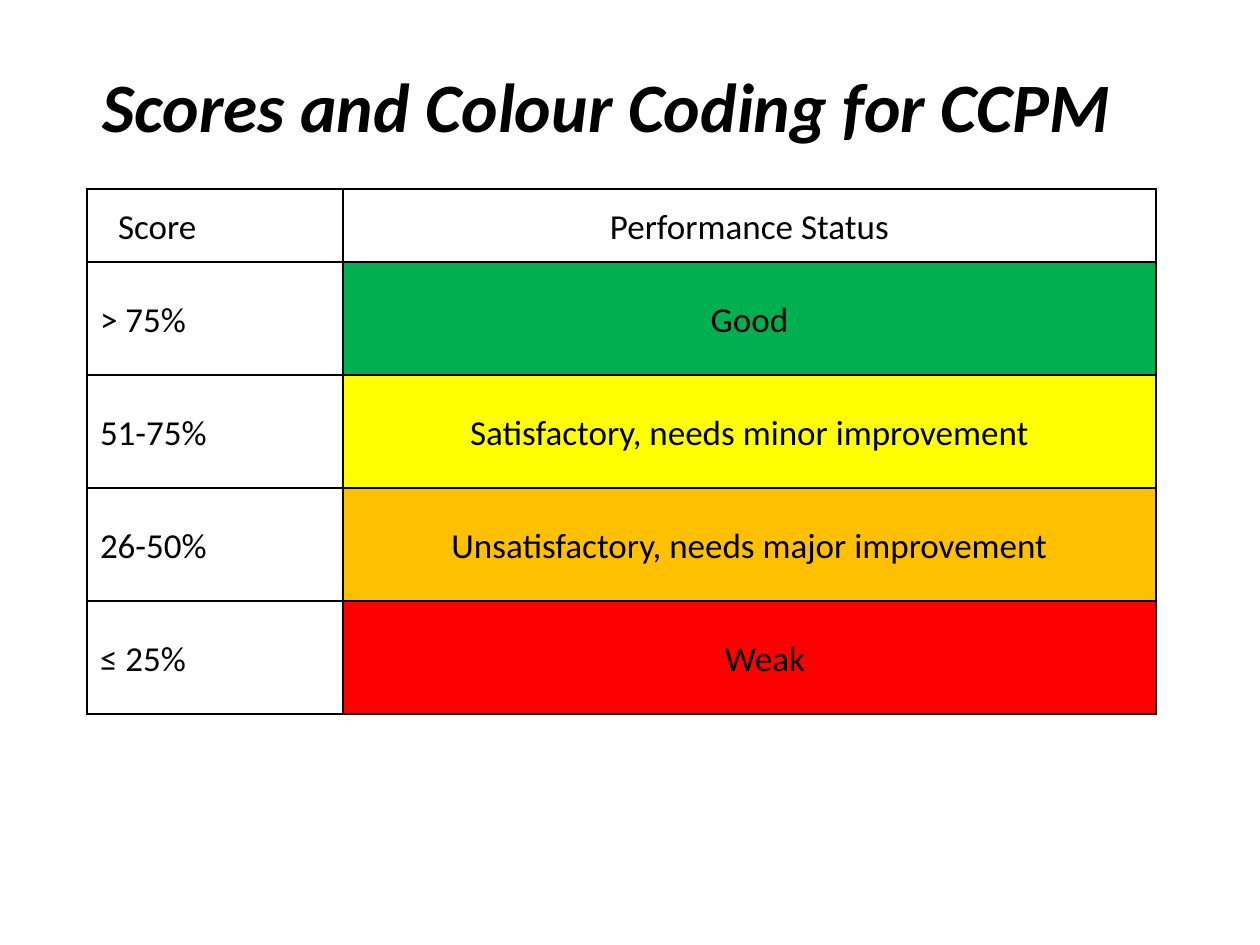
from dataclasses import dataclass

from lxml import etree
from pptx import Presentation
from pptx.dml.color import RGBColor
from pptx.enum.text import MSO_ANCHOR, PP_ALIGN
from pptx.oxml.ns import qn
from pptx.util import Emu, Pt

MIDDLE = MSO_ANCHOR.MIDDLE
LEFT = PP_ALIGN.LEFT
CENTER = PP_ALIGN.CENTER

PX_PER_INCH = 126
FONT = "Calibri"
COLORS = {
    "black": "000000",
    "good": "00B050",
    "minor": "FFFF00",
    "major": "FFC000",
    "weak": "FF0000",
}
COLUMN_WIDTHS = (256, 813)
HEADER_HEIGHT = 73
BAND_HEIGHT = 113


@dataclass
class Entry:
    text: str
    align: PP_ALIGN = CENTER
    fill: str = ""
    indent: int = 0
    margins: tuple[int, int] = (13, 6)


@dataclass
class Band:
    score: str
    status: str
    fill: str
    indent: int = 0


BANDS = (
    Band("> 75%", "Good", "good"),
    Band("51-75%", "Satisfactory, needs minor improvement", "minor"),
    Band("26-50%", "Unsatisfactory, needs major improvement", "major"),
    Band("≤ 25%", "Weak", "weak", 31),
)


def px(length: int) -> Emu:
    return Emu(round(length * 914400 / PX_PER_INCH))


def add_span(para, text: str, size: float, emphasis: bool = False) -> None:
    span = para.add_run()
    span.text = text
    span.font.name = FONT
    span.font.size = Pt(size)
    span.font.bold = span.font.italic = emphasis
    span.font.color.rgb = RGBColor.from_string(COLORS["black"])


def draw_title(page, text: str) -> None:
    box = page.shapes.add_textbox(px(54), px(53), px(1121), px(103))
    frame = box.text_frame
    frame.word_wrap = True
    frame.vertical_anchor = MIDDLE
    para = frame.paragraphs[0]
    para.alignment = CENTER
    add_span(para, text, 39.6, emphasis=True)


def draw_borders(cell) -> None:
    properties = cell._tc.get_or_add_tcPr()
    for side in ("a:lnL", "a:lnR", "a:lnT", "a:lnB"):
        line = etree.SubElement(properties, qn(side), w=str(Pt(1)))
        solid = etree.SubElement(line, qn("a:solidFill"))
        etree.SubElement(solid, qn("a:srgbClr"), val=COLORS["black"])


def draw_cell(cell, entry: Entry) -> None:
    draw_borders(cell)
    if entry.fill:
        cell.fill.solid()
        cell.fill.fore_color.rgb = RGBColor.from_string(COLORS[entry.fill])
    else:
        cell.fill.background()
    cell.vertical_anchor = MIDDLE
    across, down = entry.margins
    cell.margin_left = cell.margin_right = px(across)
    cell.margin_top = cell.margin_bottom = px(down)
    para = cell.text_frame.paragraphs[0]
    para.alignment = entry.align
    para.line_spacing = 1.1
    para.space_after = Pt(8)
    if entry.indent:
        para._p.get_or_add_pPr().set("marL", str(px(entry.indent)))
    add_span(para, entry.text, 20)


def draw_score_table(page) -> None:
    rows = [(Entry("Score", LEFT, indent=31, margins=(0, 0)), Entry("Performance Status"))]
    rows += [
        (Entry(band.score, LEFT), Entry(band.status, fill=band.fill, indent=band.indent))
        for band in BANDS
    ]
    heights = [HEADER_HEIGHT] + [BAND_HEIGHT] * len(BANDS)
    table = page.shapes.add_table(
        len(rows), len(COLUMN_WIDTHS), px(87), px(189),
        px(sum(COLUMN_WIDTHS)), px(sum(heights)),
    ).table
    table.first_row = False
    table.horz_banding = False
    for column, width in zip(table.columns, COLUMN_WIDTHS):
        column.width = px(width)
    for row, height, entries in zip(table.rows, heights, rows):
        row.height = px(height)
        for cell, entry in zip(row.cells, entries):
            draw_cell(cell, entry)


def main() -> None:
    deck = Presentation()
    deck.slide_width = px(1260)
    deck.slide_height = px(945)
    page = deck.slides.add_slide(deck.slide_layouts[6])
    draw_title(page, "Scores and Colour Coding for CCPM ")
    draw_score_table(page)
    deck.save("out.pptx")


if __name__ == "__main__":
    main()
